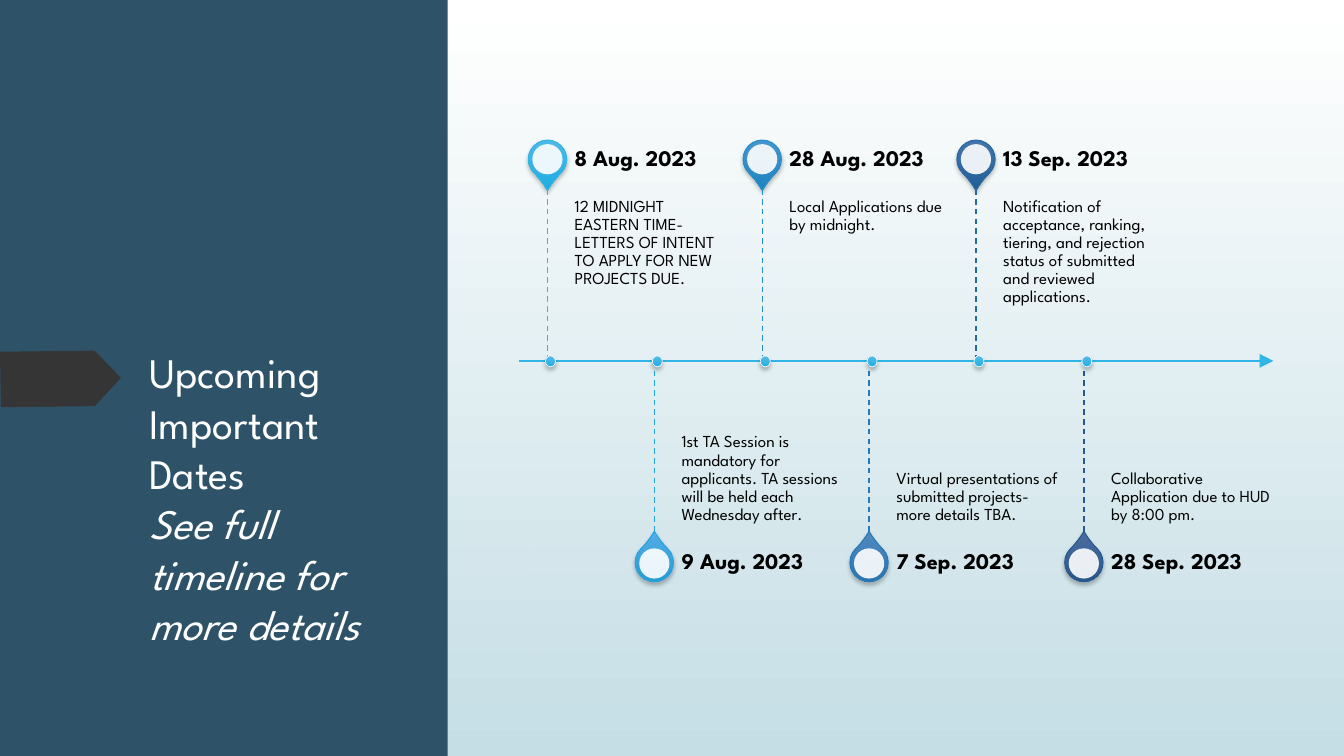
from lxml import etree
from pptx import Presentation
from pptx.dml.color import RGBColor
from pptx.enum.dml import MSO_LINE
from pptx.enum.shapes import MSO_CONNECTOR, MSO_SHAPE
from pptx.enum.text import MSO_ANCHOR, MSO_AUTO_SIZE, PP_ALIGN
from pptx.oxml.ns import qn
from pptx.util import Pt

RECT, OVAL, TEAR = MSO_SHAPE.RECTANGLE, MSO_SHAPE.OVAL, MSO_SHAPE.TEAR
TOP, MID, LOW = MSO_ANCHOR.TOP, MSO_ANCHOR.MIDDLE, MSO_ANCHOR.BOTTOM
LEFT, FIXED = PP_ALIGN.LEFT, MSO_AUTO_SIZE.NONE
LINE, DASH = MSO_CONNECTOR.STRAIGHT, MSO_LINE.DASH

SCALE = 9144  # EMU per px, 100 px to the inch
WIDE, HIGH = 1333, 750
AXIS = 358
FONT = "League Spartan"

COLS = {
    "white": "FFFFFF", "black": "000000", "mist": "C5DEE5",
    "panel": "2E5369", "tab": "353535",
    "sky": "31B4E6", "sky_hi": "57BCE9", "sky_lo": "22ADE2",
    "azure": "25A2DF", "azure_hi": "50ACE2", "azure_lo": "2198D1",
    "blue": "248DCD", "blue_hi": "4E99D2", "blue_lo": "2184BF",
    "steel": "257AB8", "steel_hi": "4E88BF", "steel_lo": "2371AC",
    "navy": "2668A4", "navy_hi": "4979B0", "navy_lo": "236199",
    "ink": "265991", "ink_hi": "496B9E", "ink_lo": "235387",
}

# Date, detail, colour; pins alternate above and below the axis
EVENTS = [
    ("8 Aug. 2023", "12 MIDNIGHT EASTERN TIME- LETTERS OF INTENT TO APPLY "
     "FOR NEW PROJECTS DUE.", "sky"),
    ("9 Aug. 2023", "1st TA Session is mandatory for applicants. TA sessions "
     "will be held each Wednesday after.", "azure"),
    ("28 Aug. 2023", "Local Applications due by midnight.", "blue"),
    ("7 Sep. 2023", "Virtual presentations of submitted projects- more "
     "details TBA.", "steel"),
    ("13 Sep. 2023", "Notification of acceptance, ranking, tiering, and "
     "rejection status of submitted and reviewed applications.", "navy"),
    ("28 Sep. 2023", "Collaborative Application due to HUD by 8:00 pm.", "ink"),
]

# Places and insets on each side of the axis
ABOVE = {"pin": 139, "turn": 135, "hole": 143, "date": 128, "text": 188,
         "stem": (188, AXIS), "anchor": TOP, "pad": (0, 8, 8, 12)}
BELOW = {"pin": 539, "turn": 315, "hole": 544, "date": 528, "text": AXIS,
         "stem": (AXIS, 528), "anchor": LOW, "pad": (0, 12, 0, 8)}


def px(*nums):
    return [num * SCALE for num in nums]


def rgb(name):
    return RGBColor.from_string(COLS[name])


def put(item, vals):
    for key, val in vals.items():
        setattr(item, key, val)


def paint(fill, *names):
    """Solid for one colour, top to bottom blend for two."""
    if len(names) == 1:
        fill.solid()
        fill.fore_color.rgb = rgb(names[0])
        return
    fill.gradient()
    fill.gradient_angle = 270
    for stop, name in zip(fill.gradient_stops, names):
        stop.color.rgb = rgb(name)


def edge(line, name, width):
    line.color.rgb = rgb(name)
    line.width = Pt(width)


def plain(item, *names):
    paint(item.fill, *names)
    item.line.fill.background()
    item.shadow.inherit = False


def shape(slide, kind, box, *names):
    item = slide.shapes.add_shape(kind, *px(*box))
    plain(item, *names)
    return item


def fade(node, part):
    etree.SubElement(node, qn("a:alpha"), val=str(part * 1000))


def shade(item):
    """Soft shadow below the shape; its blend stays upright when turned."""
    spot = item.element.spPr
    spot.find(qn("a:gradFill")).set("rotWithShape", "0")
    cast = etree.SubElement(
        spot.find(qn("a:effectLst")), qn("a:outerShdw"), blurRad=str(Pt(3)),
        dist=str(Pt(2)), dir="5400000", algn="ctr", rotWithShape="0")
    fade(etree.SubElement(cast, qn("a:srgbClr"), val=COLS["black"]), 25)


def rule(slide, ends, name, width):
    item = slide.shapes.add_connector(LINE, *px(*ends))
    edge(item.line, name, width)
    etree.SubElement(item.element.spPr, qn("a:effectLst"))
    return item


def frame(item, pad, anchor):
    sides = ("margin_left", "margin_top", "margin_right", "margin_bottom")
    put(item.text_frame, {"word_wrap": True, "auto_size": FIXED,
                          "vertical_anchor": anchor,
                          **dict(zip(sides, px(*pad)))})
    return item.text_frame.paragraphs[0]


def write(para, text, name, **style):
    run = para.add_run()
    run.text = text
    put(run.font, {"name": FONT, **style})
    run.font.color.rgb = rgb(name)


def label(slide, box, text, pad, anchor, **style):
    para = frame(slide.shapes.add_textbox(*px(*box)), pad, anchor)
    para.line_spacing = 0.9
    write(para, text, "black", **style)


def side(slide):
    """Left panel with its tab and the title."""
    shape(slide, RECT, (0, 0, 444, HIGH), "panel")
    pen = slide.shapes.build_freeform(0, 349, scale=SCALE)
    pen.add_line_segments([(82, 348), (94, 348), (120, 375), (94, 403),
                           (1, 404)])
    plain(pen.convert_to_shape(), "tab")

    title = slide.shapes.title
    title.element.getparent().append(title.element)  # in front of the panel
    put(title, dict(zip(("left", "top", "width", "height"),
                        px(138, 339, 268, 331))))
    para = frame(title, (10, 5, 10, 5), TOP)
    para.alignment = LEFT
    write(para, "Upcoming Important Dates", "white", size=Pt(30))
    para.add_line_break()
    write(para, "See full timeline for more details", "white",
          size=Pt(30), italic=True)


def event(slide, left, spot, date, text, name):
    """Pin, wording, dashed stem and dot of one date."""
    pin = shape(slide, TEAR, (left, spot["pin"], 38, 38),
                name + "_hi", name + "_lo")
    pin.adjustments[0] = 1.15
    pin.rotation = spot["turn"]
    edge(pin.line, name, 0.75)
    shade(pin)
    hole = shape(slide, OVAL, (left + 4, spot["hole"], 30, 30), "white")
    fade(hole.element.spPr.find(qn("a:solidFill"))[0], 90)

    label(slide, (left + 46, spot["text"], 161, 170), text,
          spot["pad"], spot["anchor"], size=Pt(12))
    label(slide, (left + 46, spot["date"], 161, 60), date,
          (0, 0, 11, 0), MID, size=Pt(16), bold=True)

    start, end = spot["stem"]
    stem = rule(slide, (left + 19, start, left + 19, end), name, 1)
    stem.line.dash_style = DASH
    dot = shape(slide, OVAL, (left + 17, AXIS - 5, 10, 11),
                "sky_hi", "sky_lo")
    edge(dot.line, "white", 0.5)
    shade(dot)


def main():
    deck = Presentation()
    deck.slide_width, deck.slide_height = px(WIDE, HIGH)
    slide = deck.slides.add_slide(deck.slide_layouts[5])
    paint(slide.background.fill, "white", "mist")
    side(slide)

    # Timeline
    shape(slide, RECT, (524, 0, WIDE - 524, HIGH), "white", "mist")
    axis = rule(slide, (515, AXIS, 1263, AXIS), "sky", 1.5)
    etree.SubElement(axis.element.spPr.find(qn("a:ln")), qn("a:tailEnd"),
                     type="triangle", w="lg", len="lg")
    for num, (date, text, name) in enumerate(EVENTS):
        spot = BELOW if num % 2 else ABOVE
        event(slide, 524 + round(num * 106.3), spot, date, text, name)
    deck.save("out.pptx")


if __name__ == "__main__":
    main()
